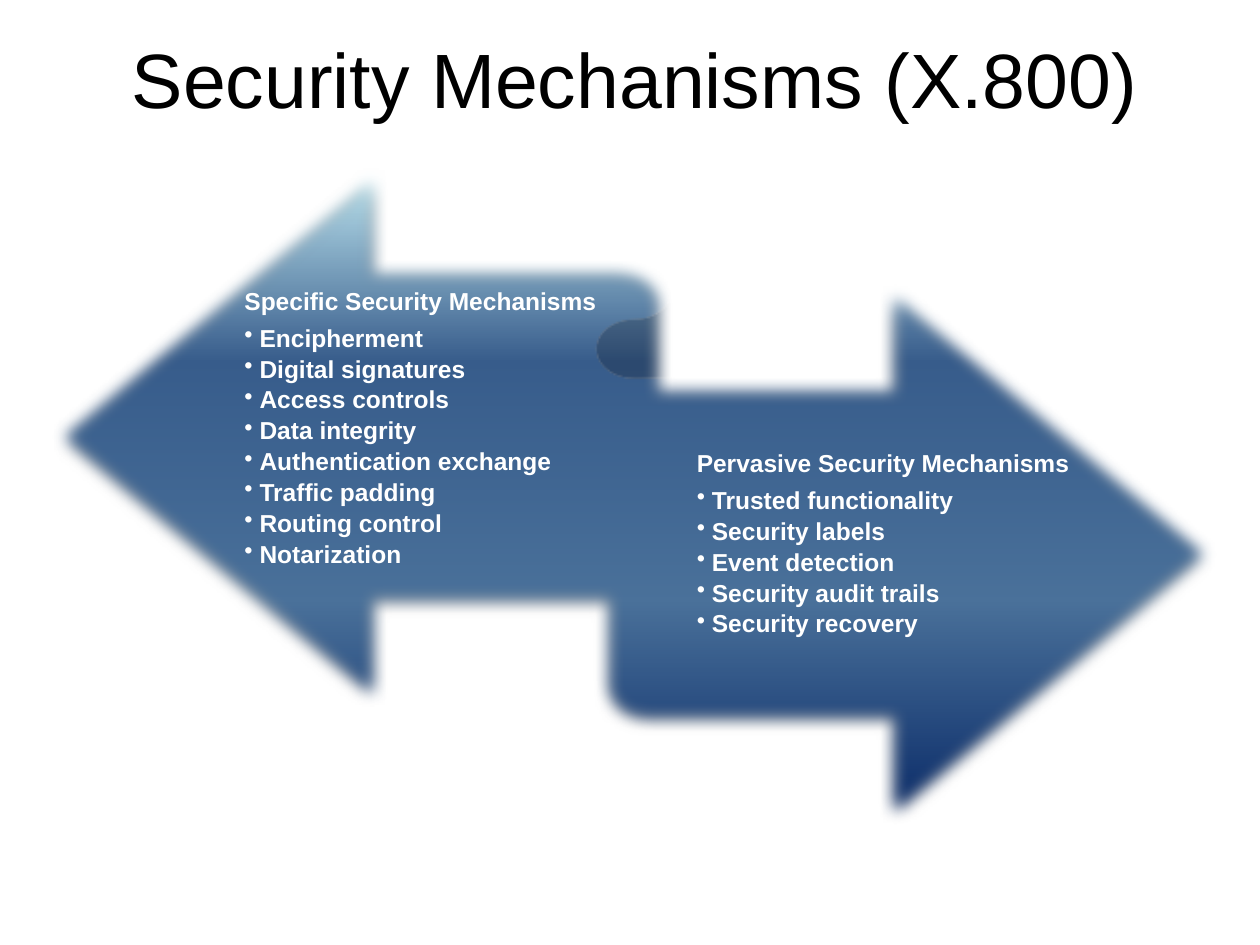
from dataclasses import dataclass

from lxml.etree import SubElement
from pptx import Presentation
from pptx.dml.color import RGBColor
from pptx.enum.shapes import MSO_SHAPE as Preset
from pptx.enum.text import MSO_ANCHOR as Anchor, PP_ALIGN as Align
from pptx.oxml import parse_xml
from pptx.oxml.ns import nsdecls, qn
from pptx.util import Emu, Inches, Pt

COLUMNS, ROWS = 100, 75  # grid cells of a tenth of an inch


@dataclass(frozen=True)
class Theme:
    font: str = "Arial"
    ink: str = "000000"
    light: str = "FFFFFF"
    title_size: int = 44
    body_size: int = 14
    line_height: float = 1.2
    line_spacing: float = 0.9
    heading_gap: float = 0.35  # shares of a line
    item_gap: float = 0.15
    indent: float = 0.12
    ribbon: tuple = ((0, "002060"), (35, "4A719A"), (50, "416793"),
                     (69, "375C8B"), (100, "D3FBFF"))


@dataclass(frozen=True)
class Area:
    column: float
    row: float
    columns: float
    rows: float


@dataclass(frozen=True)
class Mechanisms:
    area: Area
    heading: str
    items: tuple


THEME = Theme()
TITLE_AREA = Area(2.5, 0, 95.8, 12.3)
RIBBON_AREA = Area(2.8, 11.5, 95, 55.8)
GROUPS = (
    Mechanisms(Area(19.4, 24.8, 31.3, 18.6), "Specific Security Mechanisms",
               ("Encipherment", "Digital signatures", "Access controls",
                "Data integrity", "Authentication exchange",
                "Traffic padding", "Routing control", "Notarization")),
    Mechanisms(Area(55.3, 34, 37.1, 18.6), "Pervasive Security Mechanisms",
               ("Trusted functionality", "Security labels", "Event detection",
                "Security audit trails", "Security recovery")),
)


def place(deck, area: Area) -> tuple:
    """Turn grid cells into left, top, width and height."""
    cell_width, cell_height = deck.slide_width / COLUMNS, deck.slide_height / ROWS
    return (Emu(round(area.column * cell_width)), Emu(round(area.row * cell_height)),
            Emu(round(area.columns * cell_width)), Emu(round(area.rows * cell_height)))


def add_box(deck, slide, area: Area, margins: tuple = (0.1, 0.05, 0.1, 0.05)):
    frame = slide.shapes.add_textbox(*place(deck, area)).text_frame
    frame.word_wrap = True
    frame.vertical_anchor = Anchor.MIDDLE
    (frame.margin_left, frame.margin_top,
     frame.margin_right, frame.margin_bottom) = map(Inches, margins)
    return frame


def write(para, text: str, *, size: int, color: str, bold: bool = False,
          align=Align.LEFT, spacing: float = 1.0, gap: float = 0,
          bullet: bool = False) -> None:
    para.alignment = align
    para.line_spacing = spacing
    para.space_after = Pt(round(gap * size * THEME.line_height, 2))
    if bullet:
        para.level = 1
        properties = para._p.get_or_add_pPr()
        properties.set("marL", str(Inches(THEME.indent)))
        properties.set("indent", str(-Inches(THEME.indent)))
        SubElement(properties, qn("a:buChar")).set("char", "•")
    span = para.add_run()
    span.text = text
    span.font.name = THEME.font
    span.font.size = Pt(size)
    span.font.bold = bold
    span.font.color.rgb = RGBColor.from_string(color)


def add_ribbon(deck, slide, area: Area) -> None:
    ribbon = slide.shapes.add_shape(Preset.LEFT_RIGHT_RIBBON, *place(deck, area))
    # Vertical gradient, running from the bottom up
    stops = "".join(f'<a:gs pos="{share * 1000}"><a:srgbClr val="{color}"/></a:gs>'
                    for share, color in THEME.ribbon)
    properties = ribbon._element.spPr
    properties.append(parse_xml(
        f'<a:gradFill {nsdecls("a")} rotWithShape="1"><a:gsLst>{stops}</a:gsLst>'
        '<a:lin ang="16200000" scaled="0"/></a:gradFill>'))
    ribbon.line.fill.background()
    # Soft edge inside a grey shadow
    properties.append(parse_xml(
        f'<a:effectLst {nsdecls("a")}>'
        '<a:outerShdw blurRad="40000" dist="20000" dir="5400000" rotWithShape="0">'
        f'<a:srgbClr val="{THEME.ink}"><a:alpha val="38000"/></a:srgbClr>'
        '</a:outerShdw><a:softEdge rad="112500"/></a:effectLst>'))


def add_mechanisms(deck, slide, group: Mechanisms) -> None:
    frame = add_box(deck, slide, group.area, (0, 0.05, 0, 0.06))
    style = dict(size=THEME.body_size, color=THEME.light, bold=True,
                 spacing=THEME.line_spacing)
    write(frame.paragraphs[0], group.heading, gap=THEME.heading_gap, **style)
    for item in group.items:
        write(frame.add_paragraph(), item, gap=THEME.item_gap, bullet=True, **style)


def main() -> None:
    deck = Presentation()
    deck.slide_width, deck.slide_height = Inches(10), Inches(7.5)
    slide = deck.slides.add_slide(deck.slide_layouts[6])

    # Title
    title = add_box(deck, slide, TITLE_AREA)
    write(title.paragraphs[0], "Security Mechanisms (X.800)",
          size=THEME.title_size, color=THEME.ink, align=Align.CENTER)

    # Ribbon with the two groups of mechanisms
    add_ribbon(deck, slide, RIBBON_AREA)
    for group in GROUPS:
        add_mechanisms(deck, slide, group)

    deck.save("out.pptx")


if __name__ == "__main__":
    main()
